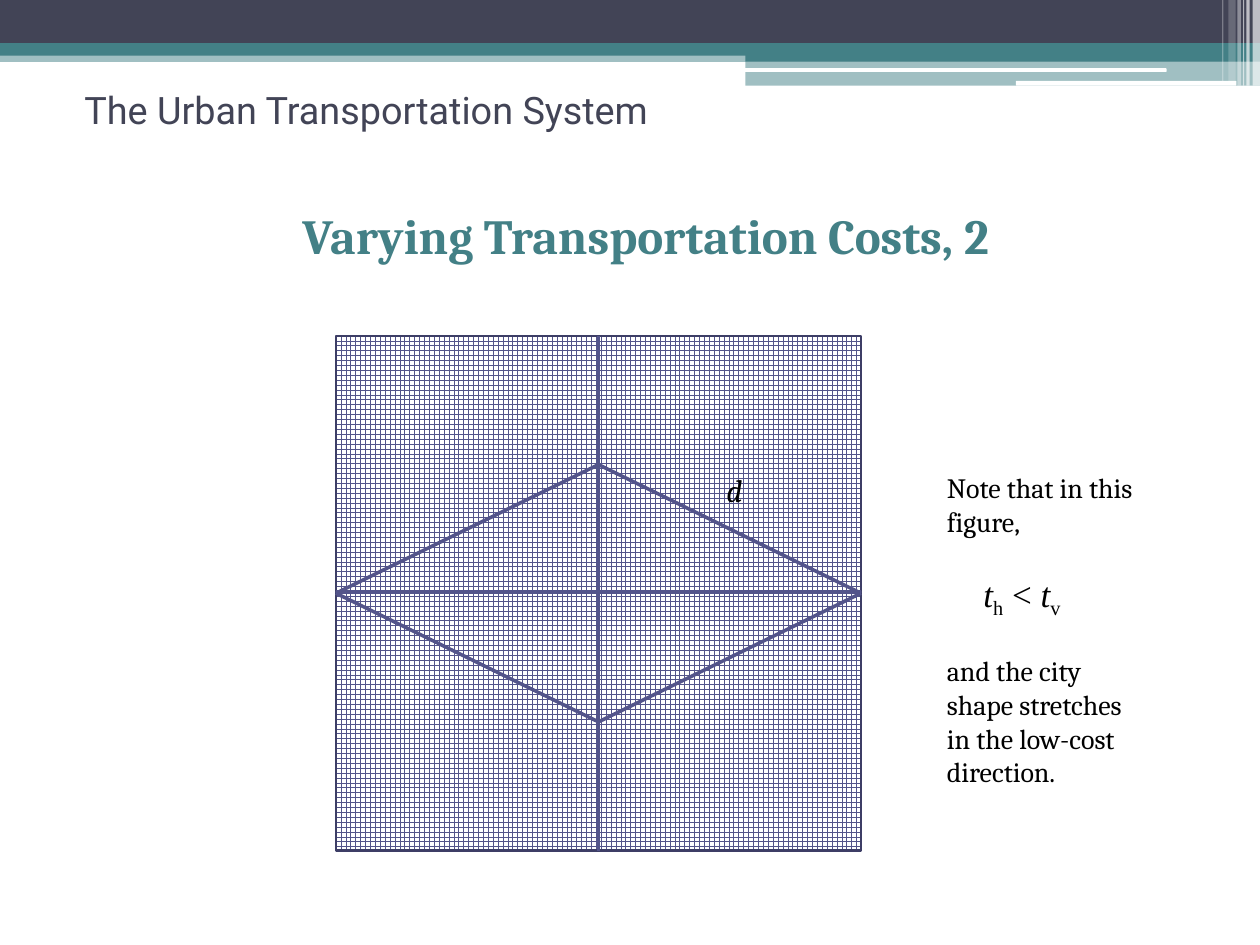
from dataclasses import dataclass
from typing import Any

from lxml import etree
from pptx import Presentation
from pptx import util as u
from pptx.dml.color import RGBColor
from pptx.enum import dml, shapes, text
from pptx.oxml import ns

COLUMNS, ROWS = 120, 90
TEAL, SLATE, WHITE, INDIGO, BLACK = "438086", "424456", "FFFFFF", "53548A", "000000"

deck = Presentation()
deck.slide_width, deck.slide_height = u.Inches(10), u.Inches(7.5)


@dataclass
class Area:
    col: float
    row: float
    cols: float
    rows: float

    def emu(self) -> list[int]:
        return [across(self.col), down(self.row), across(self.cols), down(self.rows)]


@dataclass
class Band:
    area: Area
    color: str
    opacity: int = 100
    rounded: bool = False


def across(cols: float) -> int:
    return round(deck.slide_width * cols / COLUMNS)


def down(rows: float) -> int:
    return round(deck.slide_height * rows / ROWS)


def paint(target: Any, hex_color: str) -> None:
    target.rgb = RGBColor.from_string(hex_color)


def apply(target: Any, values: dict[str, Any]) -> None:
    for name, value in values.items():
        setattr(target, name, value)


def style(font: Any, color: str, **values: Any) -> None:
    paint(font.color, color)
    apply(font, values)


def place(item: Any, area: Area) -> None:
    apply(item, dict(zip(("left", "top", "width", "height"), area.emu())))


def draw_band(parent: Any, band: Band) -> None:
    kind = shapes.MSO_SHAPE.ROUNDED_RECTANGLE if band.rounded else shapes.MSO_SHAPE.RECTANGLE
    strip = parent.add_shape(kind, *band.area.emu())
    strip.shadow.inherit = False
    strip.line.fill.background()
    strip.fill.solid()
    paint(strip.fill.fore_color, band.color)
    if band.opacity < 100:
        shade = strip._element.spPr.find(ns.qn("a:solidFill"))[0]
        etree.SubElement(shade, ns.qn("a:alpha"), val=str(band.opacity * 1000))


def draw_line(parent: Any, start: tuple[float, float], end: tuple[float, float]) -> None:
    line = parent.add_connector(
        shapes.MSO_CONNECTOR.STRAIGHT,
        across(start[0]), down(start[1]), across(end[0]), down(end[1]),
    )
    paint(line.line.color, INDIGO)
    line.line.width = u.Pt(2)
    etree.SubElement(line._element.spPr, ns.qn("a:effectLst"))


def add_frame(parent: Any, area: Area) -> Any:
    frame = parent.add_textbox(*area.emu()).text_frame
    apply(frame, {"word_wrap": True, "auto_size": text.MSO_AUTO_SIZE.SHAPE_TO_FIT_TEXT})
    return frame


slide = deck.slides.add_slide(deck.slide_layouts[1])

bands = [
    Band(Area(0, 4.8, 120, 1.1), TEAL, 50),
    Band(Area(0, 0, 120, 4.1), SLATE),
    Band(Area(0, 4.1, 120, 1.2), TEAL),
    Band(Area(71, 4.65, 49, 1.2), TEAL),
    Band(Area(71, 5.8, 49, 2.35), TEAL, 50),
    Band(Area(70.9, 6.5, 40.2, 0.35), WHITE, rounded=True),
    Band(Area(96.75, 7.7, 21, 0.45), WHITE, rounded=True),
]
stripes = [
    (119.3, 0.7, 8.15, 65),
    (118.7, 0.33, 8.15, 65),
    (118.4, 0.1, 8.15, 60),
    (117.85, 0.33, 8.15, 40),
    (117, 0.7, 7.7, 20),
    (116.4, 0.12, 7.7, 30),
]
bands += [Band(Area(col, 0, cols, rows), WHITE, opacity) for col, cols, rows, opacity in stripes]
for band in bands:
    draw_band(slide.shapes, band)

course = slide.shapes.title
place(course, Area(6, 8.3, 108, 7))
course.text_frame.text = "The Urban Transportation System"
apply(course.text_frame, {
    "auto_size": text.MSO_AUTO_SIZE.NONE,
    "vertical_anchor": text.MSO_ANCHOR.TOP,
    "margin_left": u.Inches(0.17),
    "margin_top": 0,
})
course.text_frame.paragraphs[0].alignment = text.PP_ALIGN.LEFT
style(course.text_frame.paragraphs[0].font, SLATE, name="Roboto", size=u.Pt(21.6))

topic = slide.placeholders[1]
place(topic, Area(6, 18.7, 108, 70.3))
topic.text_frame.text = "Varying Transportation Costs, 2"
apply(topic.text_frame, {"auto_size": text.MSO_AUTO_SIZE.NONE, "margin_top": u.Inches(0.07)})
heading = topic.text_frame.paragraphs[0]
apply(heading, {"level": 1, "alignment": text.PP_ALIGN.CENTER, "space_before": u.Pt(0)})
heading_format = heading._p.get_or_add_pPr()
apply_indent = {"marL": str(u.Inches(0.25)), "indent": "0"}
for name, value in apply_indent.items():
    heading_format.set(name, value)
etree.SubElement(heading_format, ns.qn("a:buNone"))
style(heading.font, TEAL, name="Cambria", size=u.Pt(28), bold=True)

figure = slide.shapes.add_group_shape().shapes
city = Area(32, 32, 50, 49)
streets = figure.add_shape(shapes.MSO_SHAPE.RECTANGLE, *city.emu())
streets.shadow.inherit = False
streets.fill.patterned()
streets.fill.pattern = dml.MSO_PATTERN.LARGE_GRID
paint(streets.fill.fore_color, INDIGO)
paint(streets.fill.back_color, WHITE)
paint(streets.line.color, "3D3E66")
streets.line.width = u.Pt(1.5)

center_col, center_row = city.col + city.cols / 2, city.row + city.rows / 2
west, east = (city.col, center_row), (city.col + city.cols, center_row)
north = (center_col, center_row - city.rows / 4)
south = (center_col, center_row + city.rows / 4)
draw_line(figure, (center_col, city.row), (center_col, city.row + city.rows))
draw_line(figure, (east[0], center_row - 0.1), (west[0], center_row - 0.1))
boundary = [north, west, south, east]
for start, end in zip(boundary, boundary[1:] + boundary[:1]):
    draw_line(figure, start, end)

note = add_frame(figure, Area(89, 44.25, 21, 31.1))
opening, formula, closing = note.paragraphs[0], note.add_paragraph(), note.add_paragraph()
opening.text = "Note that in this figure,"
closing.text = "and the city shape stretches in the low-cost direction."
for sentence in (opening, closing):
    style(sentence.font, BLACK, name="Cambria", size=u.Pt(16))
apply(formula, {"space_before": u.Pt(19.5), "space_after": u.Pt(19.5)})
formula._p.get_or_add_pPr().set("marL", str(u.Inches(0.29)))
formula._p.get_or_add_pPr().set("indent", "0")
for symbol, italic, baseline in [
    ("t", True, 0), ("h", False, -25), (" < ", False, 0), ("t", True, 0), ("v", False, -25),
]:
    part = formula.add_run()
    part.text = symbol
    style(part.font, BLACK, name="Times New Roman", size=u.Pt(20), italic=italic)
    if baseline:
        part.font._element.set("baseline", str(baseline * 1000))

distance = add_frame(figure, Area(68, 44.25, 6, 4.8)).paragraphs[0]
distance.text = "d"
style(distance.font, BLACK, name="Cambria", size=u.Pt(18), italic=True)

deck.save("out.pptx")
